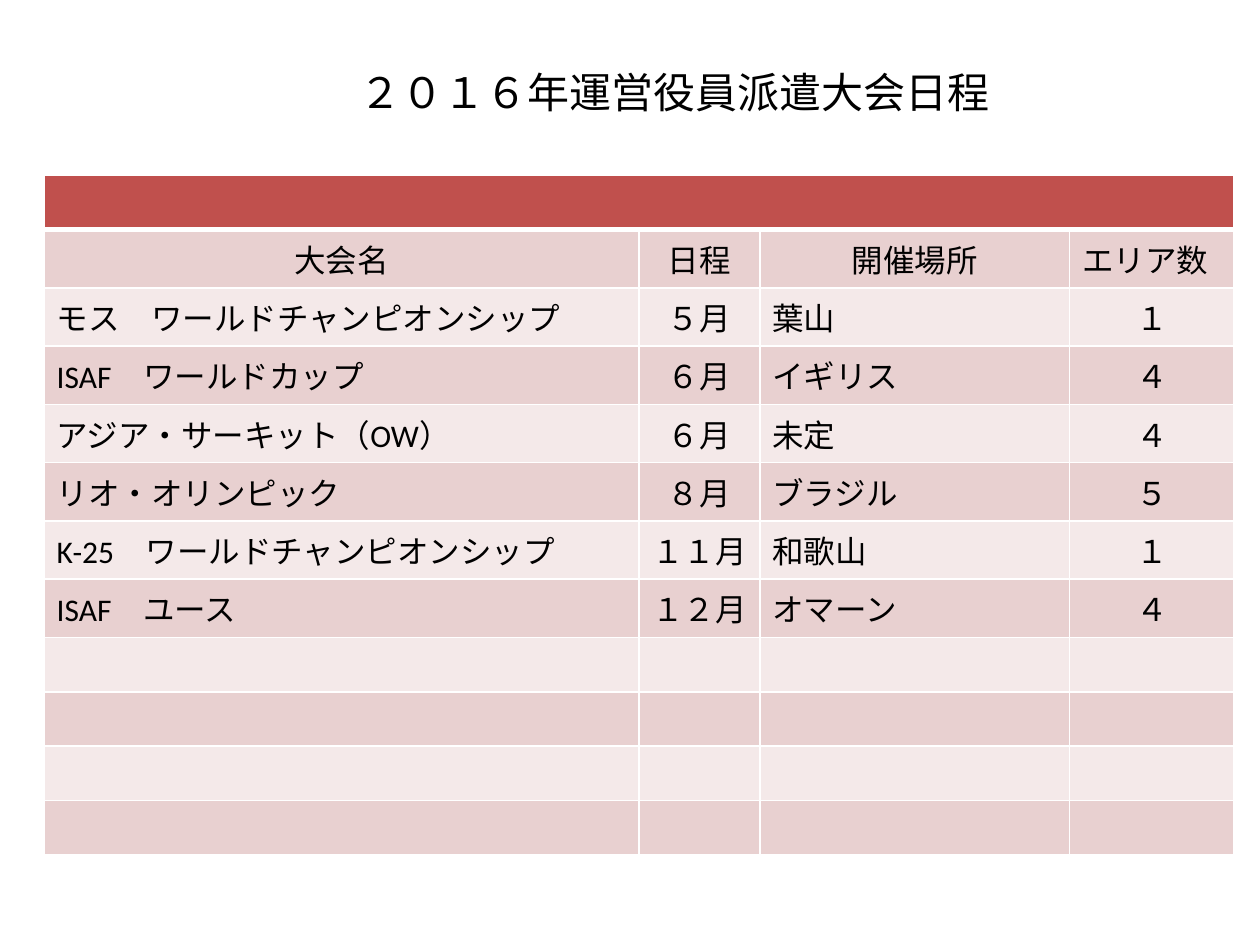
from dataclasses import dataclass

from lxml import etree
from pptx import Presentation
from pptx.dml.color import RGBColor
from pptx.enum import text as t
from pptx.oxml import ns
from pptx.util import Pt


@dataclass(frozen=True)
class Theme:
    font: str = "Calibri"
    ink: str = "000000"
    line: str = "FFFFFF"
    head: str = "C0504D"
    dark: str = "E8D0D0"
    light: str = "F4E9E9"
    title: float = 24
    body: float = 18
    thin: float = 1
    thick: float = 3


@dataclass(frozen=True)
class Event:
    name: str
    month: str
    place: str
    areas: str

    def cells(self) -> tuple[str, ...]:
        return self.name, self.month, self.place, self.areas


THEME = Theme()
LEFT, MID = t.PP_ALIGN.LEFT, t.PP_ALIGN.CENTER
WIDTHS = (340, 69, 177, 94)
ROW = 31.14
BLANKS = 4

LABELS = Event("大会名", "日程", "開催場所", "エリア数")
EVENTS = (
    Event("モス　ワールドチャンピオンシップ", "５月", "葉山", "１"),
    Event("ISAF　ワールドカップ", "６月", "イギリス", "４"),
    Event("アジア・サーキット（OW）", "６月", "未定", "４"),
    Event("リオ・オリンピック", "８月", "ブラジル", "５"),
    Event("K-25　ワールドチャンピオンシップ", "１１月", "和歌山", "１"),
    Event("ISAF　ユース", "１２月", "オマーン", "４"),
)
LABEL_ALIGN = (MID, MID, MID, LEFT)
EVENT_ALIGN = (LEFT, MID, LEFT, MID)


def write(frame, words: str, *, size: float = THEME.body, align=LEFT) -> None:
    """Put one formatted paragraph in a text frame."""
    para = frame.paragraphs[0]
    para.alignment = align
    run = para.add_run()
    run.text = words
    run.font.name = THEME.font
    run.font.size = Pt(size)
    run.font.color.rgb = RGBColor.from_string(THEME.ink)


def paint(cell, fill: str, top: float, base: float) -> None:
    """Fill a cell and rule its four sides."""
    cell.fill.solid()
    cell.fill.fore_color.rgb = RGBColor.from_string(fill)
    props = cell._tc.get_or_add_tcPr()
    sides = {"lnL": THEME.thin, "lnR": THEME.thin, "lnT": top, "lnB": base}
    for spot, (tag, width) in enumerate(sides.items()):
        line = etree.Element(ns.qn(f"a:{tag}"), w=str(Pt(width)))
        solid = etree.SubElement(line, ns.qn("a:solidFill"))
        etree.SubElement(solid, ns.qn("a:srgbClr"), val=THEME.line)
        props.insert(spot, line)


def add_title(slide) -> None:
    title = slide.shapes.title
    title.left, title.top = Pt(36), Pt(21.6)
    title.width, title.height = Pt(648), Pt(61.2)
    frame = title.text_frame
    frame.vertical_anchor = t.MSO_ANCHOR.MIDDLE
    frame.margin_left = Pt(58)  # moves the centred line to the right
    write(frame, "２０１６年運営役員派遣大会日程", size=THEME.title, align=MID)


def add_dates(slide) -> None:
    count = 2 + len(EVENTS) + BLANKS
    table = slide.shapes.add_table(
        count, len(WIDTHS), Pt(25.2), Pt(100.1), Pt(sum(WIDTHS)), Pt(count * ROW)
    ).table
    table.first_row = table.horz_banding = False
    for col, width in zip(table.columns, WIDTHS):
        col.width = Pt(width)

    # Header band and alternating rows
    for r, row in enumerate(table.rows):
        row.height = Pt(ROW)
        fill = THEME.head if r == 0 else THEME.dark if r % 2 else THEME.light
        top = THEME.thick if r == 1 else THEME.thin
        base = THEME.thick if r == 0 else THEME.thin
        for cell in row.cells:
            paint(cell, fill, top, base)
    table.cell(0, 0).merge(table.cell(0, len(WIDTHS) - 1))

    # Labels and events
    for r, event in enumerate((LABELS, *EVENTS), start=1):
        aligns = LABEL_ALIGN if r == 1 else EVENT_ALIGN
        for c, (words, align) in enumerate(zip(event.cells(), aligns)):
            write(table.cell(r, c).text_frame, words, align=align)


def main() -> None:
    deck = Presentation()
    deck.slide_width, deck.slide_height = Pt(720), Pt(540)
    slide = deck.slides.add_slide(deck.slide_layouts[5])
    add_title(slide)
    add_dates(slide)
    deck.save("out.pptx")


if __name__ == "__main__":
    main()
